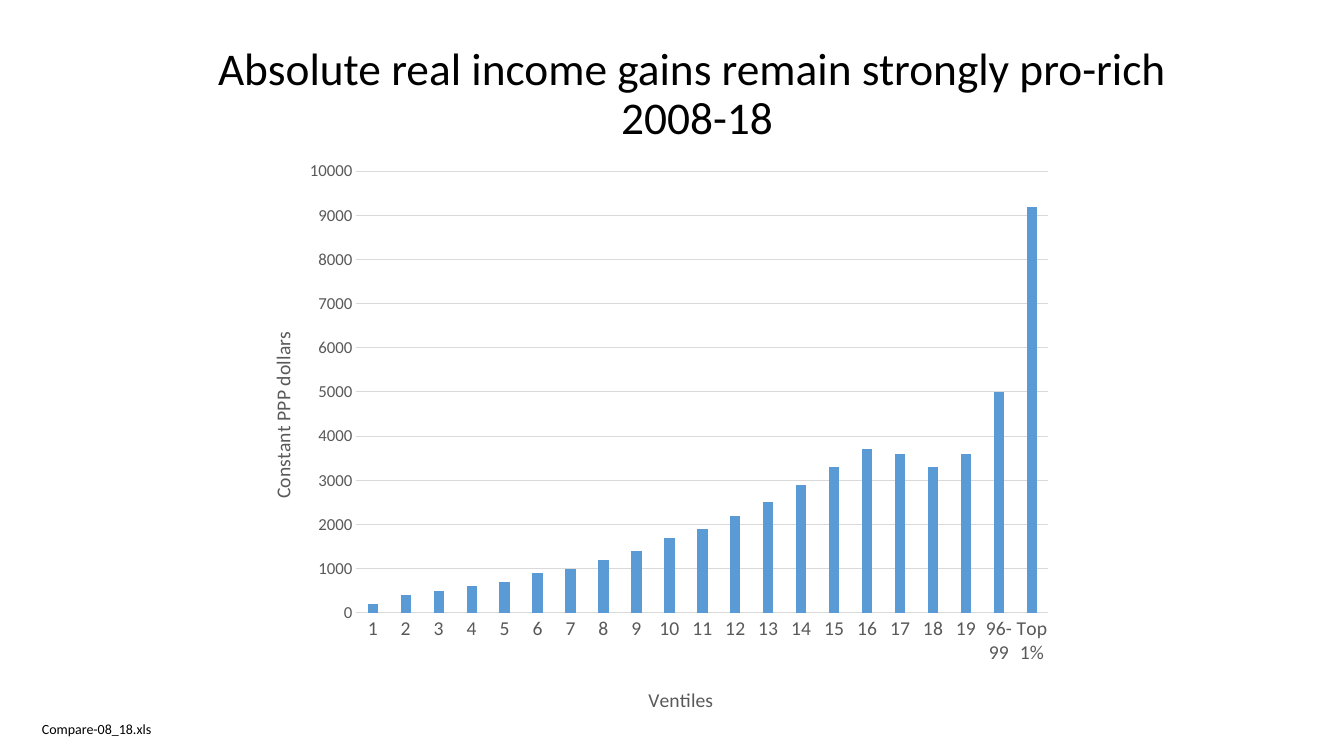
from lxml import etree
from pptx import Presentation
from pptx.chart.data import CategoryChartData
from pptx.dml.color import RGBColor
from pptx.enum.chart import XL_CHART_TYPE, XL_TICK_MARK
from pptx.enum.text import MSO_ANCHOR, PP_ALIGN
from pptx.oxml.ns import qn
from pptx.util import Pt

COLUMNS = XL_CHART_TYPE.COLUMN_CLUSTERED
NO_TICK = XL_TICK_MARK.NONE
MIDDLE, TOP = MSO_ANCHOR.MIDDLE, MSO_ANCHOR.TOP
CENTER, LEFT = PP_ALIGN.CENTER, PP_ALIGN.LEFT

EMU_PER_PX = 914400 / 100.8
FONT = "Calibri"
BLACK, GRAY, GRID, BLUE = "000000", "595959", "D9D9D9", "5B9BD5"

VENTILES = [str(number) for number in range(1, 20)] + ["96-99", "Top 1%"]
GAINS = [200, 400, 500, 600, 700, 900, 1000, 1200, 1400, 1700, 1900,
         2200, 2500, 2900, 3300, 3700, 3600, 3300, 3600, 5000, 9200]


def px(length):
    """Turn pixels into EMU."""
    return round(length * EMU_PER_PX)


def color(hex_string):
    """Turn a hex string into a colour."""
    return RGBColor.from_string(hex_string)


def style_font(font, size, hex_string):
    """Set the typeface, size and colour of a font."""
    font.name = FONT
    font.size = Pt(size)
    font.bold = False
    font.color.rgb = color(hex_string)


def add_text(slide, box, text, size, anchor, alignment, line_spacing):
    """Place one paragraph of text in a box."""
    text_box = slide.shapes.add_textbox(*map(px, box))
    frame = text_box.text_frame
    frame.word_wrap = True
    frame.vertical_anchor = anchor
    paragraph = frame.paragraphs[0]
    paragraph.text = text
    paragraph.alignment = alignment
    paragraph.line_spacing = line_spacing
    for run in paragraph.runs:
        style_font(run.font, size, BLACK)


def set_layout(parent, before, **fractions):
    """Fix a chart part at fractions of the chart area."""
    for old_layout in parent.findall(qn("c:layout")):
        parent.remove(old_layout)
    layout = etree.Element(qn("c:layout"))
    manual = etree.SubElement(layout, qn("c:manualLayout"))
    settings = {"xMode": "edge", "yMode": "edge", **fractions}
    if "w" in fractions:
        settings = {"layoutTarget": "inner", **settings}
    for name, value in settings.items():
        etree.SubElement(manual, qn(f"c:{name}")).set("val", str(value))
    parent.find(qn(before)).addprevious(layout)


def style_axis(axis, title, tick_size, x, y):
    """Format an axis and place its title."""
    axis.major_tick_mark = NO_TICK
    axis.minor_tick_mark = NO_TICK
    style_font(axis.tick_labels.font, tick_size, GRAY)
    axis_title = axis.axis_title
    axis_title.text_frame.text = title
    style_font(axis_title.text_frame.paragraphs[0].runs[0].font, 14, GRAY)
    set_layout(axis_title._element, "c:overlay", x=x, y=y)


def add_gains_chart(slide, box):
    """Draw the column chart of income gains in a box."""
    data = CategoryChartData(number_format="0")
    data.categories = VENTILES
    data.add_series("Series 1", GAINS)
    chart = slide.shapes.add_chart(COLUMNS, *map(px, box), data).chart
    chart.has_legend = False
    chart.has_title = False
    style_font(chart.font, 10, BLACK)

    plot = chart.plots[0]
    plot.gap_width = 219
    plot.overlap = -27
    plot.vary_by_categories = False
    fill = plot.series[0].format.fill
    fill.solid()
    fill.fore_color.rgb = color(BLUE)

    ventile_axis, dollar_axis = chart.category_axis, chart.value_axis
    style_axis(ventile_axis, "Ventiles", 14, x=0.49, y=0.92)
    style_axis(dollar_axis, "Constant PPP dollars", 12, x=0.03, y=0.31)
    dollar_axis.minimum_scale = 0
    dollar_axis.maximum_scale = 10000
    dollar_axis.major_unit = 1000
    dollar_axis.tick_labels.number_format = "0"
    dollar_axis.tick_labels.number_format_is_linked = False
    dollar_axis.format.line.fill.background()
    for line in (ventile_axis.format.line, dollar_axis.major_gridlines.format.line):
        line.color.rgb = color(GRID)
        line.width = Pt(0.75)

    plot_area = chart._chartSpace.chart.plotArea
    set_layout(plot_area, "c:barChart", x=0.14, y=0.04, w=0.84, h=0.76)


def main():
    """Build and save the slide."""
    presentation = Presentation()
    presentation.slide_width = px(1344)
    presentation.slide_height = px(756)
    slide = presentation.slides.add_slide(presentation.slide_layouts[6])
    add_text(slide, (135, 41, 1114, 108),
             "Absolute real income gains remain strongly pro-rich\v 2008-18",
             32.4, MIDDLE, CENTER, 0.9)
    add_gains_chart(slide, (241, 148, 824, 581))
    add_text(slide, (32, 716, 366, 27), "Compare-08_18.xls", 10, TOP, LEFT, 1.0)
    presentation.save("out.pptx")


if __name__ == "__main__":
    main()
